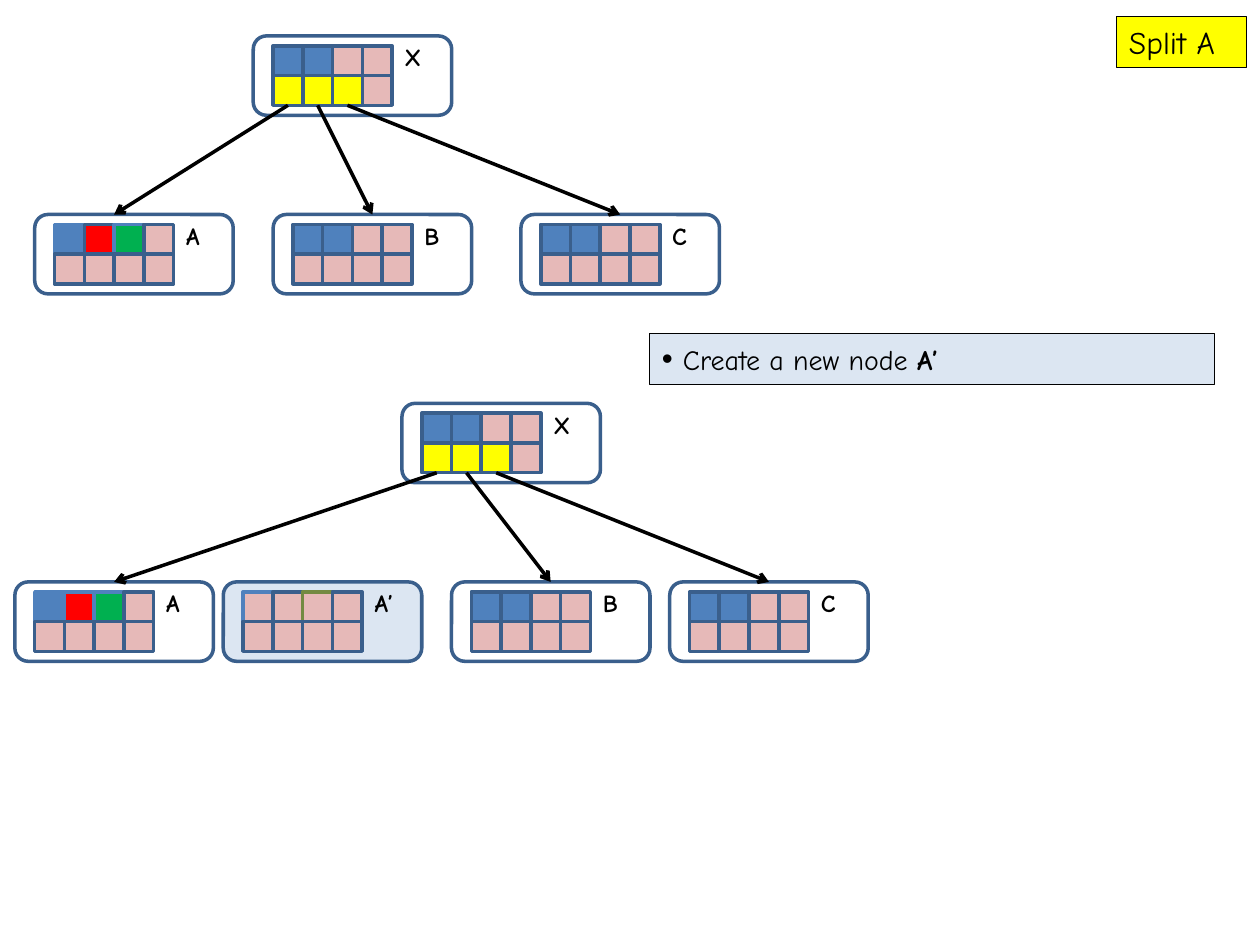
from typing import NamedTuple

from lxml.etree import SubElement
from pptx import Presentation
from pptx.dml.color import RGBColor
from pptx.enum.shapes import MSO_CONNECTOR, MSO_SHAPE
from pptx.enum.text import MSO_ANCHOR, MSO_AUTO_SIZE, PP_ALIGN
from pptx.oxml.ns import qn
from pptx.util import Pt

FONT = "Comic Neue"
BLACK = RGBColor(0x00, 0x00, 0x00)
YELLOW = RGBColor(0xFF, 0xFF, 0x00)
BLUE = RGBColor(0x4F, 0x81, 0xBD)
NAVY = RGBColor(0x3A, 0x5F, 0x8C)
PINK = RGBColor(0xE6, 0xB9, 0xB8)
RED = RGBColor(0xFF, 0x00, 0x00)
GREEN = RGBColor(0x00, 0xB0, 0x50)
OLIVE = RGBColor(0x73, 0x8A, 0x42)
PALE_BLUE = RGBColor(0xDC, 0xE6, 0xF2)

# Node geometry in points
NODE_W, NODE_H = 113.4, 45.35
CELL = 17
PAD_X, PAD_Y = 11.35, 5.65
COLUMNS = 4
LEVEL_GAP = 102.05


class Cell(NamedTuple):
    fill: RGBColor
    border: RGBColor = NAVY


class Node(NamedTuple):
    label: str
    left: float
    keys: tuple[Cell, ...]
    pointers: tuple[Cell, ...]
    fill: RGBColor | None = None
    has_parent: bool = True
    tip_shift: float = 0


class Tree(NamedTuple):
    top: float
    root: Node
    children: tuple[Node, ...]


FREE, KEY, POINTER = Cell(PINK), Cell(BLUE), Cell(YELLOW)
NO_POINTERS = (FREE,) * COLUMNS
TWO_KEYS = (KEY, KEY, FREE, FREE)
THREE_POINTERS = (POINTER, POINTER, POINTER, FREE)
FIRST_KEY, NEW_KEY = Cell(BLUE, BLUE), Cell(GREEN, BLUE)
FULL_BEFORE = (FIRST_KEY, Cell(RED), NEW_KEY, FREE)
FULL_AFTER = (FIRST_KEY, Cell(RED, BLUE), NEW_KEY, FREE)
EMPTY_KEYS = (Cell(PINK, BLUE), FREE, Cell(PINK, OLIVE), FREE)

TREES = (
    Tree(20.55, Node("X", 144.7, TWO_KEYS, THREE_POINTERS), (
        Node("A", 19.85, FULL_BEFORE, NO_POINTERS, tip_shift=-PAD_X),
        Node("B", 156.1, TWO_KEYS, NO_POINTERS),
        Node("C", 297.7, TWO_KEYS, NO_POINTERS),
    )),
    Tree(230.5, Node("X", 229.7, TWO_KEYS, THREE_POINTERS), (
        Node("A", 8.5, FULL_AFTER, NO_POINTERS),
        Node("A’", 127.6, EMPTY_KEYS, NO_POINTERS, PALE_BLUE, has_parent=False),
        Node("B", 258, TWO_KEYS, NO_POINTERS),
        Node("C", 382.7, TWO_KEYS, NO_POINTERS),
    )),
)


def write(paragraph, text: str, *, size: float, bold: bool = False) -> None:
    run = paragraph.add_run()
    run.text = text
    run.font.name = FONT
    run.font.size = Pt(size)
    run.font.bold = bold
    run.font.color.rgb = BLACK
    paragraph.alignment = PP_ALIGN.LEFT


def paint(shape, fill: RGBColor | None, border: RGBColor, width: float) -> None:
    if fill is None:
        shape.fill.background()
    else:
        shape.fill.solid()
        shape.fill.fore_color.rgb = fill
    shape.line.color.rgb = border
    shape.line.width = Pt(width)


def add_box(shapes, kind, left: float, top: float, width: float, height: float,
            fill: RGBColor | None, border: RGBColor = NAVY, line: float = 2):
    box = shapes.add_shape(kind, Pt(left), Pt(top), Pt(width), Pt(height))
    box.shadow.inherit = False
    paint(box, fill, border, line)
    return box


def draw_node(shapes, node: Node, top: float):
    """Draw one node and return its frame and its bottom row of cells."""
    frame = add_box(shapes, MSO_SHAPE.ROUNDED_RECTANGLE, node.left, top,
                    NODE_W, NODE_H, node.fill)
    rows = [
        [add_box(shapes, MSO_SHAPE.RECTANGLE, node.left + PAD_X + column * CELL,
                 top + PAD_Y + row * CELL, CELL, CELL, cell.fill, cell.border)
         for column, cell in enumerate(cells)]
        for row, cells in enumerate((node.keys, node.pointers))
    ]
    label_left = PAD_X + COLUMNS * CELL
    label = shapes.add_textbox(Pt(node.left + label_left), Pt(top),
                               Pt(NODE_W - label_left), Pt(24.25))
    label.text_frame.word_wrap = True
    write(label.text_frame.paragraphs[0], node.label, size=14, bold=True)
    return frame, rows[-1]


def draw_arrow(shapes, pointer, frame, tip_shift: float) -> None:
    arrow = shapes.add_connector(
        MSO_CONNECTOR.STRAIGHT,
        pointer.left + pointer.width // 2, pointer.top + pointer.height,
        frame.left + frame.width // 2 + Pt(tip_shift), frame.top)
    arrow.begin_connect(pointer, 2)
    if not tip_shift:
        arrow.end_connect(frame, 0)
    arrow.line.color.rgb = BLACK
    arrow.line.width = Pt(2)
    SubElement(arrow.line._get_or_add_ln(), qn("a:tailEnd"), type="arrow")
    SubElement(arrow._element.spPr, qn("a:effectLst"))


def draw_tree(slide, tree: Tree) -> None:
    shapes = slide.shapes.add_group_shape().shapes
    _, pointers = draw_node(shapes, tree.root, tree.top)
    free_pointers = iter(pointers)
    for child in tree.children:
        frame, _ = draw_node(shapes, child, tree.top + LEVEL_GAP)
        if child.has_parent:
            draw_arrow(shapes, next(free_pointers), frame, child.tip_shift)


def draw_title(slide) -> None:
    title = slide.shapes.title
    title.left, title.top, title.width, title.height = (
        Pt(637.9), Pt(9.35), Pt(74.2), Pt(29.1))
    paint(title, YELLOW, BLACK, 0.75)
    frame = title.text_frame
    frame.word_wrap = True
    frame.auto_size = MSO_AUTO_SIZE.NONE
    frame.vertical_anchor = MSO_ANCHOR.TOP
    write(frame.paragraphs[0], "Split A", size=18)


def draw_step(slide) -> None:
    step = add_box(slide.shapes, MSO_SHAPE.RECTANGLE, 371.2, 190.6, 322.8, 29.1,
                   PALE_BLUE, BLACK, 0.75)
    step.text_frame.word_wrap = True
    step.text_frame.vertical_anchor = MSO_ANCHOR.MIDDLE
    paragraph = step.text_frame.paragraphs[0]
    properties = paragraph._p.get_or_add_pPr()
    properties.set("marL", str(Pt(12)))
    properties.set("indent", str(-Pt(12)))
    SubElement(properties, qn("a:buSzPct"), val="112000")
    SubElement(properties, qn("a:buFont"), typeface="Arial")
    SubElement(properties, qn("a:buChar"), char="•")
    write(paragraph, "Create a new node ", size=16)
    write(paragraph, "A’", size=16, bold=True)


def main() -> None:
    deck = Presentation()
    deck.slide_width, deck.slide_height = Pt(720), Pt(540)
    slide = deck.slides.add_slide(deck.slide_layouts[5])
    draw_title(slide)
    draw_step(slide)
    for tree in TREES:
        draw_tree(slide, tree)
    deck.save("out.pptx")


if __name__ == "__main__":
    main()
